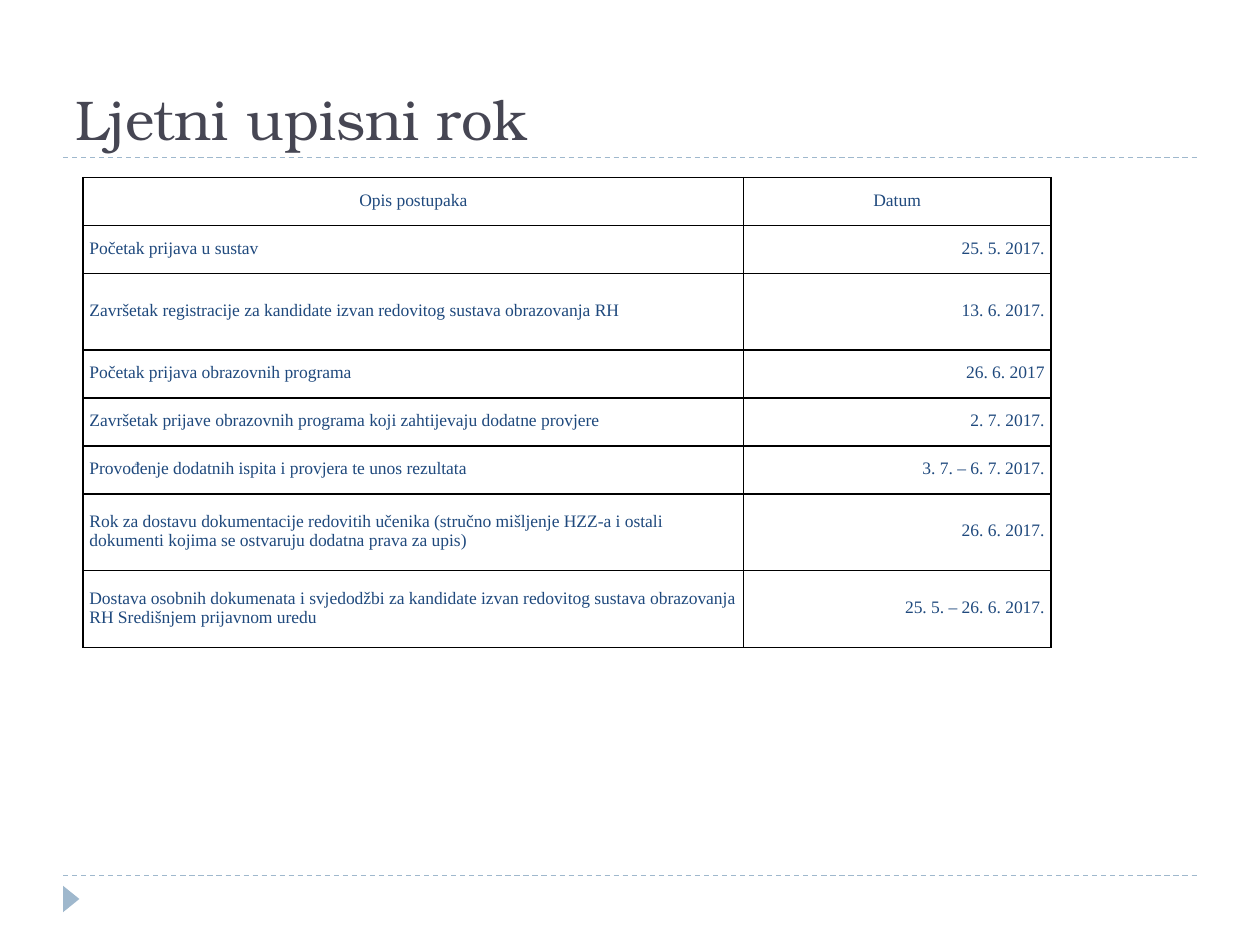
from lxml import etree
from pptx import Presentation
from pptx.dml.color import RGBColor
from pptx.enum.dml import MSO_LINE
from pptx.enum.shapes import MSO_CONNECTOR, MSO_SHAPE
from pptx.enum.text import MSO_ANCHOR, PP_ALIGN
from pptx.oxml.ns import qn
from pptx.util import Inches, Pt

DASH = MSO_LINE.DASH
STRAIGHT = MSO_CONNECTOR.STRAIGHT
TRIANGLE = MSO_SHAPE.ISOSCELES_TRIANGLE
BOTTOM, MIDDLE = MSO_ANCHOR.BOTTOM, MSO_ANCHOR.MIDDLE
LEFT, CENTER, RIGHT = PP_ALIGN.LEFT, PP_ALIGN.CENTER, PP_ALIGN.RIGHT

COLORS = {"accent": "9FB8CD", "title": "464653", "table": "1F497D", "border": "000000"}
COL_WIDTHS = [5.24, 2.44]
SHORT_ROW, TALL_ROW = 0.38, 0.61
HEADER = ("Opis postupaka", "Datum", SHORT_ROW)
DEADLINES = [
    ("Početak prijava u sustav", "25. 5. 2017.", SHORT_ROW),
    ("Završetak registracije za kandidate izvan redovitog sustava obrazovanja RH",
     "13. 6. 2017.", TALL_ROW),
    ("Početak prijava obrazovnih programa", "26. 6. 2017", SHORT_ROW),
    ("Završetak prijave obrazovnih programa koji zahtijevaju dodatne provjere",
     "2. 7. 2017.", SHORT_ROW),
    ("Provođenje dodatnih ispita i provjera te unos rezultata",
     "3. 7. – 6. 7. 2017.", SHORT_ROW),
    ("Rok za dostavu dokumentacije redovitih učenika (stručno mišljenje HZZ-a i ostali "
     "dokumenti kojima se ostvaruju dodatna prava za upis)", "26. 6. 2017.", TALL_ROW),
    ("Dostava osobnih dokumenata i svjedodžbi za kandidate izvan redovitog sustava "
     "obrazovanja RH Središnjem prijavnom uredu", "25. 5. – 26. 6. 2017.", TALL_ROW),
]


def rgb(name):
    return RGBColor.from_string(COLORS[name])


def write_text(tf, text, *, font, size, color, align=LEFT):
    tf.word_wrap = True
    p = tf.paragraphs[0]
    p.alignment = align
    r = p.add_run()
    r.text = text
    r.font.name = font
    r.font.size = Pt(size)
    r.font.color.rgb = rgb(color)


def add_rule(s, left, top, width):
    line = s.shapes.add_connector(STRAIGHT, Inches(left), Inches(top),
                                  Inches(left + width), Inches(top))
    line.line.color.rgb = rgb("accent")
    line.line.width = Pt(0.75)
    line.line.dash_style = DASH
    etree.SubElement(line._element.spPr, qn("a:effectLst"))


def add_title(s, left, top, width, height):
    add_rule(s, left, top + height, width)
    box = s.shapes.add_textbox(Inches(left), Inches(top), Inches(width), Inches(height))
    box.text_frame.vertical_anchor = BOTTOM
    write_text(box.text_frame, "Ljetni upisni rok", font="TeX Gyre Bonum", size=32,
               color="title")


def add_footer(s, left, top, width):
    add_rule(s, left, top, width)
    sp = s.shapes.add_shape(TRIANGLE, Inches(left - 0.04), Inches(top + 0.12),
                            Inches(0.21), Inches(0.13))
    sp.rotation = 90
    sp.shadow.inherit = False
    sp.fill.solid()
    sp.fill.fore_color.rgb = rgb("accent")
    sp.line.fill.background()


def set_borders(cell):
    tc_pr = cell._tc.get_or_add_tcPr()
    for i, side in enumerate(("lnL", "lnR", "lnT", "lnB")):
        ln = etree.Element(qn(f"a:{side}"), w=str(Pt(1)))
        fill = etree.SubElement(ln, qn("a:solidFill"))
        etree.SubElement(fill, qn("a:srgbClr"), val=COLORS["border"])
        tc_pr.insert(i, ln)


def fill_cell(cell, text, align):
    cell.fill.background()
    cell.vertical_anchor = MIDDLE
    cell.margin_left = cell.margin_right = cell.margin_top = Inches(0.05)
    cell.margin_bottom = Inches(0.07)
    write_text(cell.text_frame, text, font="Times New Roman", size=10, color="table",
               align=align)
    set_borders(cell)


def add_deadlines(s, left, top):
    rows = [HEADER] + DEADLINES
    height = sum(row[2] for row in rows)
    table = s.shapes.add_table(len(rows), len(COL_WIDTHS), Inches(left), Inches(top),
                               Inches(sum(COL_WIDTHS)), Inches(height)).table
    table.first_row = table.horz_banding = False
    for col, width in zip(table.columns, COL_WIDTHS):
        col.width = Inches(width)
    for i, (step, date, row_height) in enumerate(rows):
        table.rows[i].height = Inches(row_height)
        aligns = (LEFT, RIGHT) if i else (CENTER, CENTER)
        for j, text in enumerate((step, date)):
            fill_cell(table.cell(i, j), text, aligns[j])


def main():
    prs = Presentation()
    prs.slide_width, prs.slide_height = Inches(10), Inches(7.5)
    s = prs.slides.add_slide(prs.slide_layouts[6])
    add_footer(s, 0.5, 6.95, 9)
    add_title(s, 0.5, 0.17, 9, 1.08)
    add_deadlines(s, 0.66, 1.41)
    prs.save("out.pptx")


if __name__ == "__main__":
    main()
